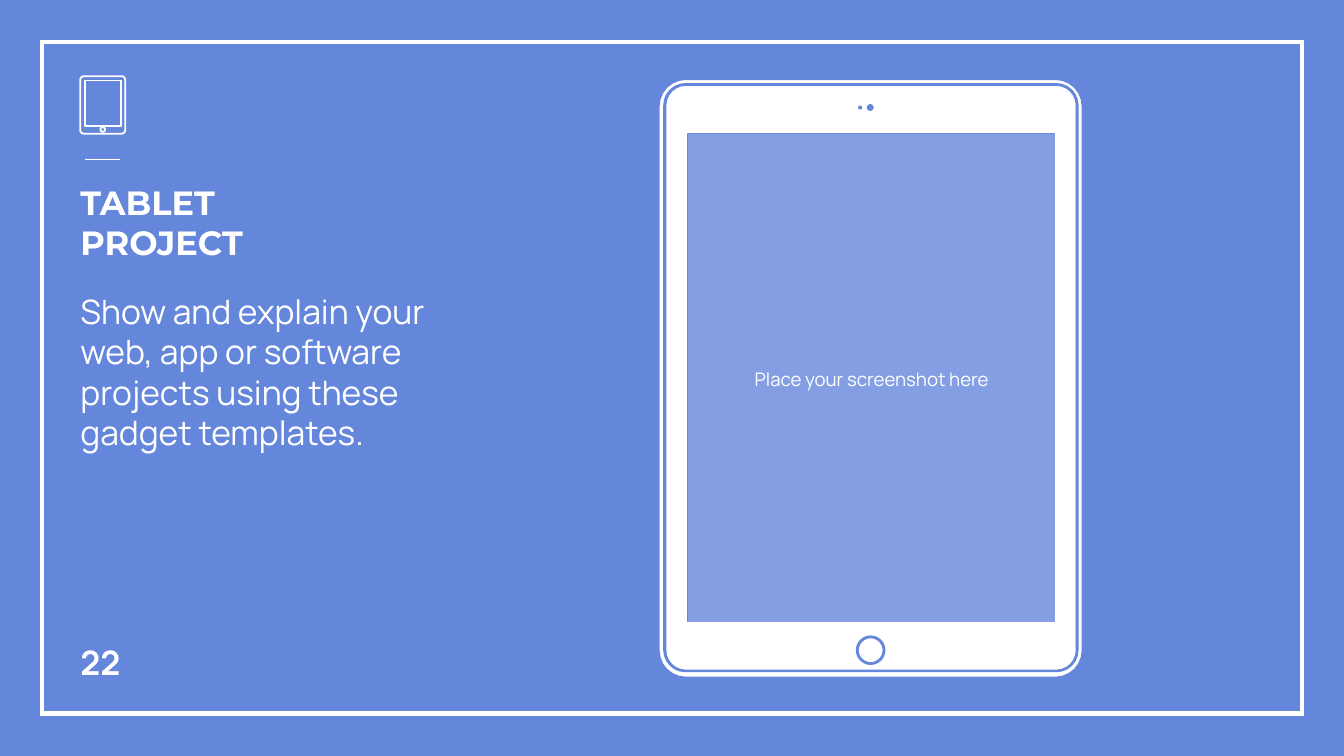
"""Build the tablet project slide: text on the left, tablet mockup on the right."""
from math import cos, pi, sin

from lxml import etree
from pptx import Presentation
from pptx.dml.color import RGBColor
from pptx.enum.shapes import MSO_CONNECTOR, MSO_SHAPE
from pptx.enum.text import MSO_ANCHOR, PP_ALIGN
from pptx.oxml.ns import qn
from pptx.util import Inches, Pt

RECTANGLE = MSO_SHAPE.RECTANGLE
STRAIGHT = MSO_CONNECTOR.STRAIGHT
TOP, MIDDLE, BOTTOM = MSO_ANCHOR.TOP, MSO_ANCHOR.MIDDLE, MSO_ANCHOR.BOTTOM
LEFT, CENTER = PP_ALIGN.LEFT, PP_ALIGN.CENTER

COLORS = {"blue": "6486DB", "white": "FFFFFF"}
SLIDE_WIDTH = Inches(10)
SLIDE_HEIGHT = SLIDE_WIDTH * 9 // 16
COLUMNS = 1000
CELL = SLIDE_WIDTH // COLUMNS
CORNER_STEPS = 6
SCREEN_OPACITY = 20

FRAME = (31.3, 31.5, 937.5, 499.5)
RULE = (63, 118.6, 89, 118.6)
SCREENSHOT = (512, 99.6, 273, 365)

TEXTS = [
    ("22", (50, 458, 60, 60), "Manrope", True, BOTTOM),
    ("TABLET PROJECT", (50, 125.4, 236, 89), "Montserrat", True, TOP),
    ("Show and explain your web, app or software projects using these gadget templates.",
     (50, 206.4, 322, 282), "Manrope", False, TOP),
]

TABLET = [
    (490.3, 59, 315, 445, 20),
    (494, 62.3, 308, 437.4, 16),
    (495.3, 63.4, 305.6, 435.4, 15),
    (512, 99.6, 272.4, 363, 0),
    (637.3, 473.3, 21, 21, 10.5),
    (638.4, 474.4, 18.8, 18.8, 9.4),
    (639, 79, 2, 2, 1),
    (645.5, 78, 4, 4, 2),
]
ICON = [
    (59.7, 56.7, 33.5, 42.8, 2.8),
    (74.8, 94.7, 3.4, 3.4, 1.7),
    (63, 60, 27, 34, 0),
]


def grid(lengths):
    return [round(length * CELL) for length in lengths]


def color(name):
    return RGBColor.from_string(COLORS[name])


def paint(shape, fill, line, width=0):
    shape.shadow.inherit = False
    if fill:
        shape.fill.solid()
        shape.fill.fore_color.rgb = color(fill)
    else:
        shape.fill.background()
    if line:
        shape.line.color.rgb = color(line)
        shape.line.width = Pt(width)
    else:
        shape.line.fill.background()


def contour(left, top, width, height, radius):
    right, bottom = left + width, top + height
    if not radius:
        corners = [(left, top), (right, top), (right, bottom), (left, bottom)]
        return [grid(corner) for corner in corners]
    centers = [(left + radius, top + radius), (right - radius, top + radius),
               (right - radius, bottom - radius), (left + radius, bottom - radius)]
    points = []
    for quarter, (x, y) in enumerate(centers):
        for step in range(CORNER_STEPS + 1):
            angle = pi + (quarter + step / CORNER_STEPS) * pi / 2
            points.append(grid((x + radius * cos(angle), y + radius * sin(angle))))
    return points


def add_outline(shapes, contours):
    first, *others = [contour(*part) for part in contours]
    builder = shapes.build_freeform(*first[0])
    builder.add_line_segments(first[1:], close=True)
    for points in others:
        builder.move_to(*points[0])
        builder.add_line_segments(points[1:], close=True)
    return builder.convert_to_shape()


def write(shape, text, font_name, size, bold, anchor, align):
    frame = shape.text_frame
    frame.word_wrap = True
    frame.vertical_anchor = anchor
    frame.margin_left = frame.margin_right = Inches(0.1)
    frame.margin_top = frame.margin_bottom = Inches(0.1)
    paragraph = frame.paragraphs[0]
    paragraph.text = text
    paragraph.alignment = align
    font = paragraph.font
    font.name, font.size, font.bold = font_name, Pt(size), bold
    font.color.rgb = color("white")


def main():
    presentation = Presentation()
    presentation.slide_width = SLIDE_WIDTH
    presentation.slide_height = SLIDE_HEIGHT
    slide = presentation.slides.add_slide(presentation.slide_layouts[6])
    slide.background.fill.solid()
    slide.background.fill.fore_color.rgb = color("blue")
    shapes = slide.shapes

    border = shapes.add_shape(RECTANGLE, *grid(FRAME))
    paint(border, None, "white", 2.25)
    etree.SubElement(border._element.spPr.find(qn("a:ln")), qn("a:miter"), lim="800000")
    rule = shapes.add_connector(STRAIGHT, *grid(RULE))
    rule.line.color.rgb = color("white")
    rule.line.width = Pt(0.75)
    etree.SubElement(rule._element.spPr, qn("a:effectLst"))

    paint(add_outline(shapes, TABLET), "white", "blue", 0.75)
    screenshot = shapes.add_shape(RECTANGLE, *grid(SCREENSHOT))
    paint(screenshot, "white", None)
    tint = screenshot._element.spPr.find(qn("a:solidFill"))[0]
    etree.SubElement(tint, qn("a:alpha"), val=str(SCREEN_OPACITY * 1000))
    write(screenshot, "Place your screenshot here", "Manrope", 10, False, MIDDLE, CENTER)

    for text, place, font_name, bold, anchor in TEXTS:
        write(shapes.add_textbox(*grid(place)), text, font_name, 18, bold, anchor, LEFT)

    paint(add_outline(shapes, ICON), None, "white", 0.96)
    presentation.save("out.pptx")


if __name__ == "__main__":
    main()
